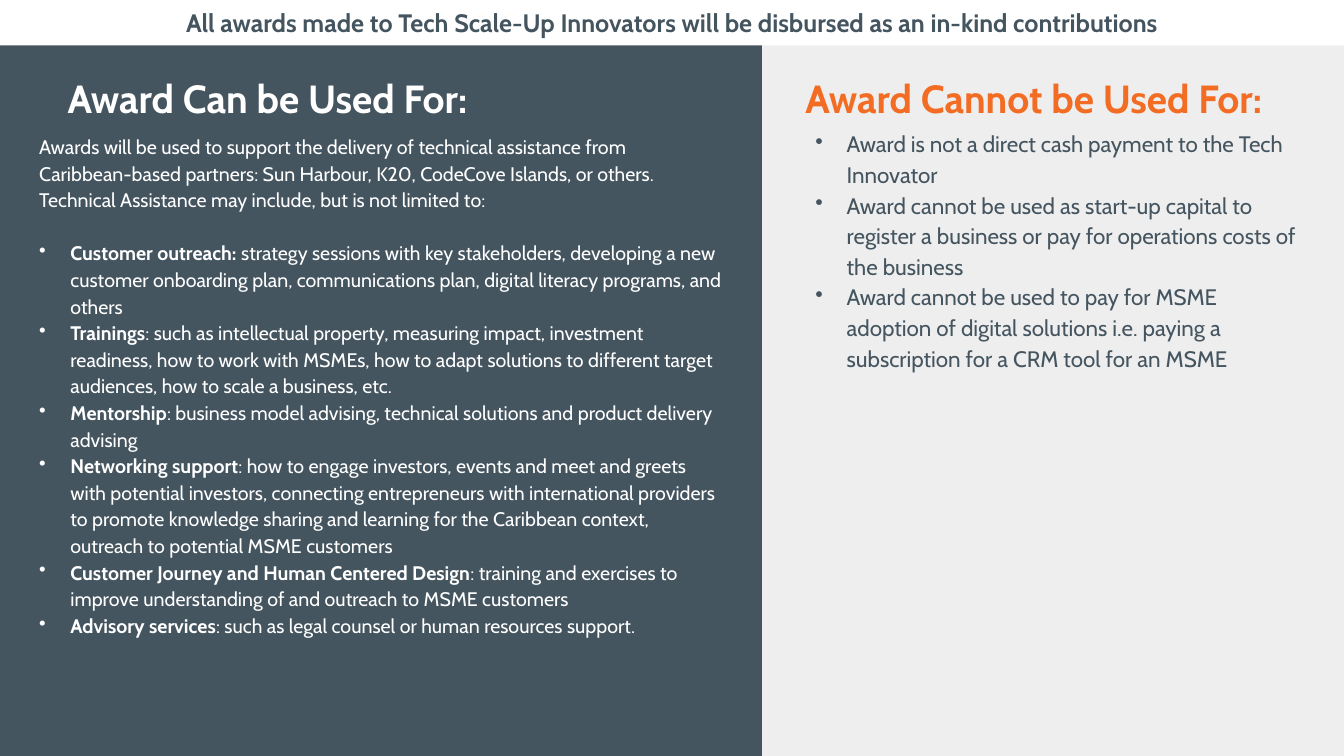
import pptx
import pptx.dml.color
import pptx.enum.shapes
import pptx.enum.text
import pptx.oxml.ns
import pptx.util
from lxml import etree
from pptx.util import Inches

SLATE, GREY, ORANGE, WHITE = "455560", "EEEEEE", "F36C23", "FFFFFF"
SPLIT = 7.56

INTRODUCTION = (
    "Awards will be used to support the delivery of technical assistance from "
    "Caribbean-based partners: Sun Harbour, K20, CodeCove Islands, or others. "
    "Technical Assistance may include, but is not limited to:"
)
ALLOWED_USES = [
    ("Customer outreach: ",
     "strategy sessions with key stakeholders, developing a new customer onboarding plan, "
     "communications plan, digital literacy programs, and others"),
    ("Trainings",
     ": such as intellectual property, measuring impact, investment readiness, how to work "
     "with MSMEs, how to adapt solutions to different target audiences, how to scale a "
     "business, etc."),
    ("Mentorship",
     ": business model advising, technical solutions and product delivery advising"),
    ("Networking support",
     ": how to engage investors, events and meet and greets with potential investors, "
     "connecting entrepreneurs with international providers to promote knowledge sharing and "
     "learning for the Caribbean context, outreach to potential MSME customers"),
    ("Customer Journey and Human Centered Design",
     ": training and exercises to improve understanding of and outreach to MSME customers"),
    ("Advisory services", ": such as legal counsel or human resources support."),
]
EXCLUDED_USES = [
    "Award is not a direct cash payment to the Tech Innovator",
    "Award cannot be used as start-up capital to register a business or pay for operations "
    "costs of the business",
    "Award cannot be used to pay for MSME adoption of digital solutions i.e. paying a "
    "subscription for a CRM tool for an MSME",
]


def rgb(color):
    return pptx.dml.color.RGBColor.from_string(color)


def format_paragraph(paragraph, size, color, spacing, bold=None, bullet=False):
    """Set spacing, an optional hanging bullet, and the font of a paragraph."""
    paragraph.line_spacing = spacing
    if bullet:
        properties = paragraph._p.get_or_add_pPr()
        properties.set("marL", str(Inches(0.31)))
        properties.set("indent", str(-Inches(0.31)))
        mark = etree.SubElement(properties, pptx.oxml.ns.qn("a:buChar"))
        mark.set("char", "•")
    paragraph.font.name = "Cabin"
    paragraph.font.size = pptx.util.Pt(size)
    paragraph.font.color.rgb = rgb(color)
    paragraph.font.bold = bold


presentation = pptx.Presentation()
presentation.slide_width = Inches(13.33)
presentation.slide_height = Inches(7.5)
slide = presentation.slides.add_slide(presentation.slide_layouts[5])
shapes = slide.shapes

# Two panels and the banner across the top
for left, width, height, color in [
    (0, SPLIT, 7.5, SLATE),
    (SPLIT, 13.33 - SPLIT, 7.5, GREY),
    (0, 13.33, 0.45, WHITE),
]:
    banner = shapes.add_shape(
        pptx.enum.shapes.MSO_SHAPE.RECTANGLE, Inches(left), 0, Inches(width), Inches(height))
    banner.shadow.inherit = False
    banner.fill.solid()
    banner.fill.fore_color.rgb = rgb(color)
    banner.line.fill.background()

paragraph = banner.text_frame.paragraphs[0]
paragraph.text = "All awards made to Tech Scale-Up Innovators will be disbursed as an in-kind contributions"
paragraph.alignment = pptx.enum.text.PP_ALIGN.CENTER
format_paragraph(paragraph, 18, SLATE, 1.0, bold=True)

# Headings: the title placeholder is lifted above the panels
title = shapes.title
shapes._spTree.append(title._element)
title.left, title.top, title.width, title.height = Inches(0.57), 0, Inches(6.09), Inches(1.26)
excluded_heading = shapes.add_textbox(Inches(7.89), 0, Inches(5.2), Inches(1.26))
for heading, text, color in [
    (title, "Award Can be Used For:", WHITE),
    (excluded_heading, "Award Cannot be Used For:", ORANGE),
]:
    frame = heading.text_frame
    frame.word_wrap = True
    frame.auto_size = pptx.enum.text.MSO_AUTO_SIZE.NONE
    frame.vertical_anchor = pptx.enum.text.MSO_ANCHOR.BOTTOM
    paragraph = frame.paragraphs[0]
    paragraph.text = text
    paragraph.alignment = pptx.enum.text.PP_ALIGN.LEFT
    format_paragraph(paragraph, 28, color, 0.9, bold=True)

# Allowed uses
frame = shapes.add_textbox(Inches(0.29), Inches(1.26), Inches(6.98), Inches(6.09)).text_frame
frame.word_wrap = True
frame.paragraphs[0].text = INTRODUCTION
format_paragraph(frame.paragraphs[0], 14, WHITE, 1.13)
for index, (name, details) in enumerate(ALLOWED_USES):
    paragraph = frame.add_paragraph()
    name_run = paragraph.add_run()
    name_run.text = name
    name_run.font.bold = True
    paragraph.add_run().text = details
    if index == 0:
        paragraph.space_before = pptx.util.Pt(19)
    format_paragraph(paragraph, 14, WHITE, 1.13, bullet=True)

# Excluded uses
frame = shapes.add_textbox(Inches(7.99), Inches(1.21), Inches(5), Inches(5.53)).text_frame
frame.word_wrap = True
frame.text = "\n".join(EXCLUDED_USES)
for paragraph in frame.paragraphs:
    format_paragraph(paragraph, 16, SLATE, 1.14, bullet=True)

presentation.save("out.pptx")
